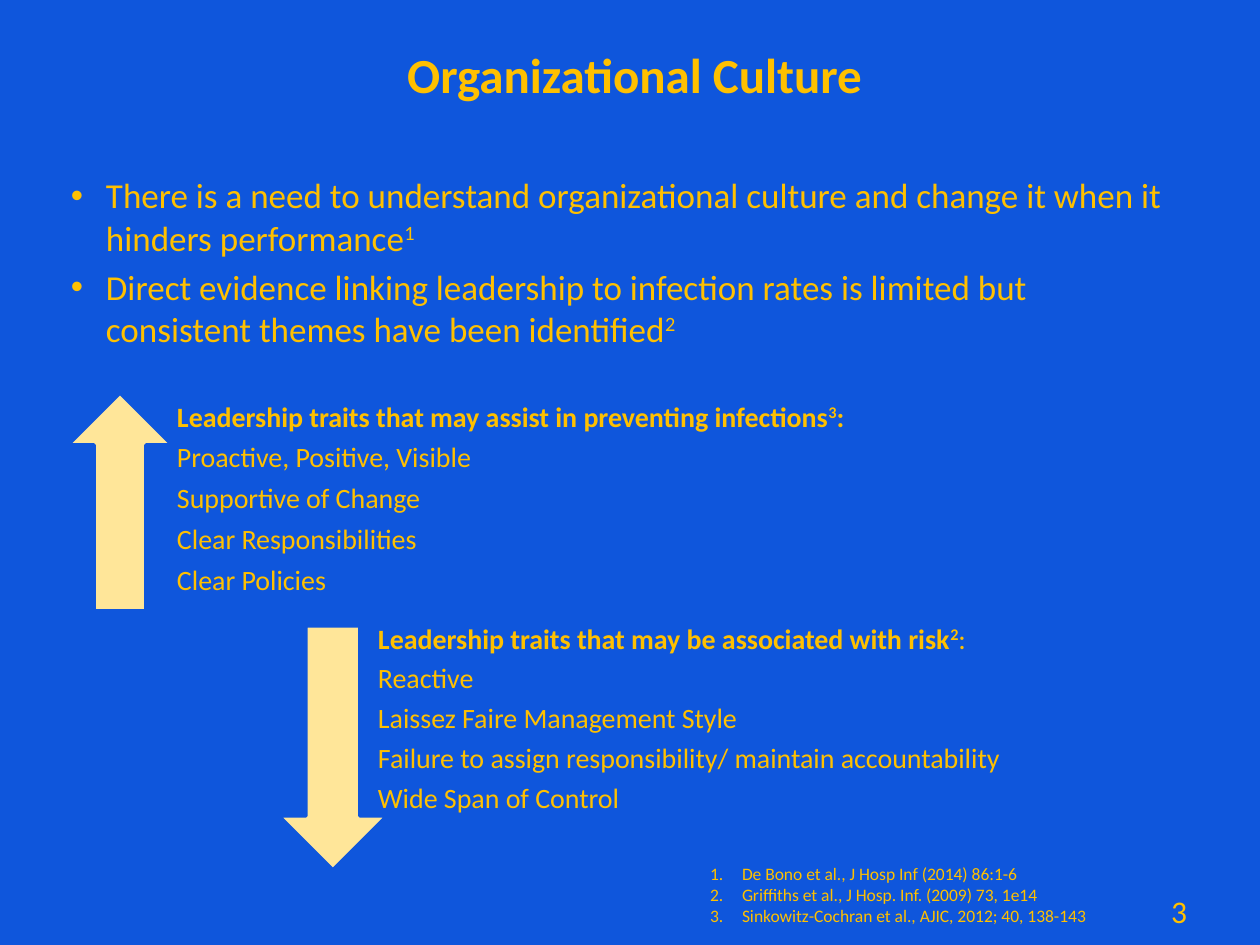
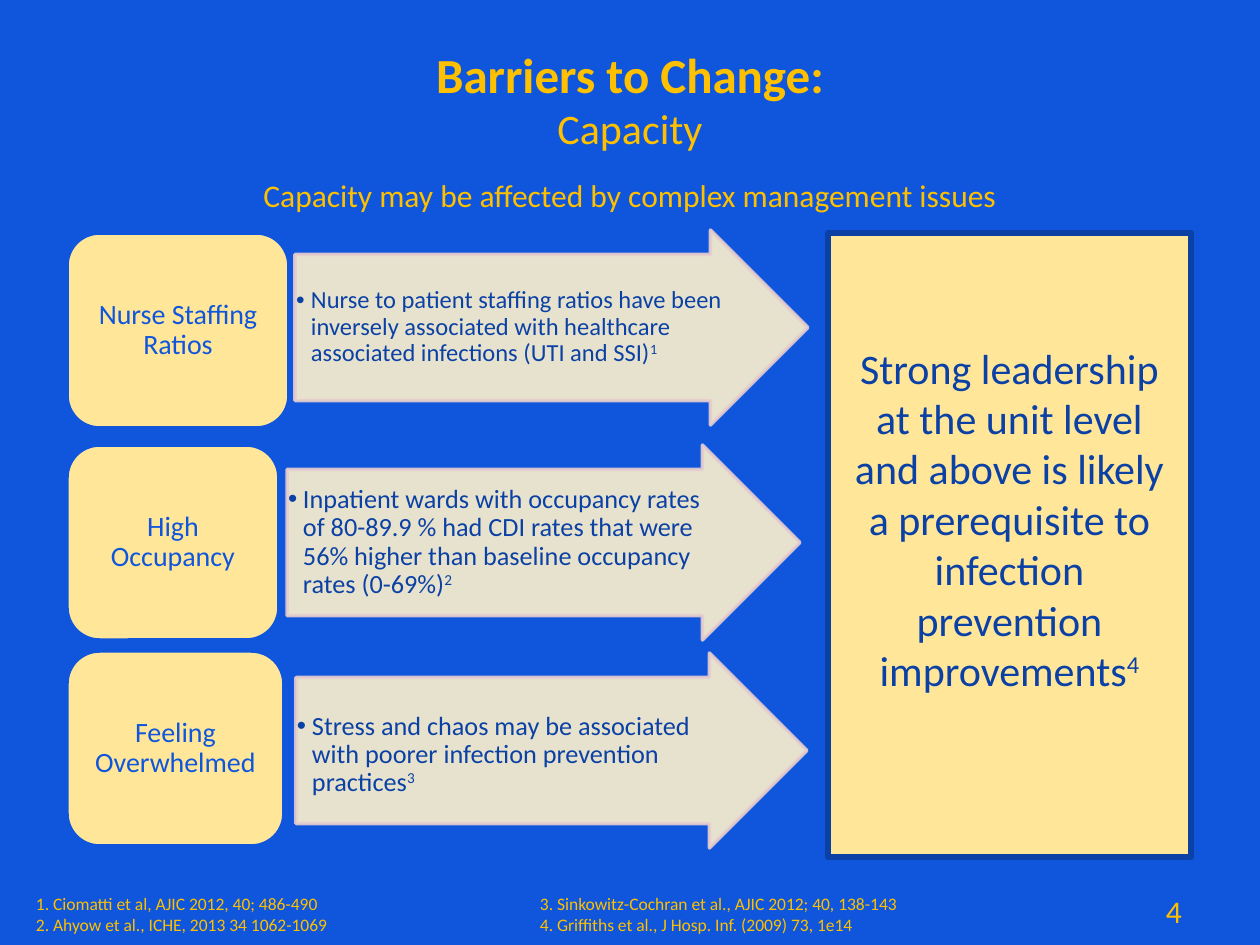
from collections.abc import Sequence
from dataclasses import dataclass
from typing import Optional, Union

from lxml.etree import SubElement
from pptx import Presentation
from pptx.dml.color import RGBColor as Rgb
from pptx.enum.shapes import MSO_SHAPE as Preset
from pptx.enum.text import MSO_ANCHOR as Anchor, PP_ALIGN as Align
from pptx.oxml.ns import qn
from pptx.util import Emu, Pt

EMU_PER_PX = 914400 / 126


@dataclass(frozen=True)
class Theme:
    """Colours and type sizes shared by the slides."""

    font: str = "Calibri"
    blue: str = "0F56DC"
    navy: str = "0B41A5"
    gold: str = "FFC000"
    sand: str = "FFE699"
    cream: str = "FFF2CC"
    rose: str = "E8CECE"
    title: int = 28
    heading: int = 24
    body: int = 20
    note: int = 18
    label: int = 16
    reference: int = 10


THEME = Theme()


@dataclass(frozen=True)
class Area:
    """A rectangle in px."""

    left: int
    top: int
    width: int
    height: int


@dataclass(frozen=True)
class Span:
    """A piece of text with its own weight, size or raised baseline."""

    text: str
    bold: bool = False
    raised: bool = False
    size: Optional[int] = None


@dataclass(frozen=True)
class Bullet:
    """A hanging mark: a character, or automatic numbers when it is empty."""

    indent: int
    character: str = ""


@dataclass(frozen=True)
class Insets:
    """Text margins in px."""

    left: int = 13
    top: int = 6
    right: int = 13
    bottom: int = 6


Line = Union[str, Sequence[Span]]


@dataclass(frozen=True)
class Trait:
    """An arrow with a list of leadership traits beside it."""

    preset: Preset
    arrow: Area
    text: Area
    lines: Sequence[Line]
    after: float


@dataclass(frozen=True)
class Barrier:
    """A labelled box and the arrow that explains it."""

    label: str
    label_box: Area
    arrow: Area
    finding: str
    source: str
    size: int
    top_inset: int = 1


TRAITS = (
    Trait(Preset.UP_ARROW, Area(68, 393, 104, 218), Area(162, 403, 1030, 215), (
        (Span("Leadership traits that may assist in preventing infections", bold=True),
         Span("3", bold=True, raised=True), Span(":", bold=True)),
        "Proactive, Positive, Visible",
        "Supportive of Change",
        "Clear Responsibilities",
        "Clear Policies",
    ), 6),
    Trait(Preset.DOWN_ARROW, Area(279, 626, 108, 244), Area(363, 625, 830, 244), (
        (Span("Leadership traits that may be associated with risk", bold=True),
         Span("2", bold=True, raised=True), Span(":")),
        "Reactive",
        "Laissez Faire Management Style",
        "Failure to assign responsibility/ maintain accountability",
        "Wide Span of Control",
    ), 5.5),
)

BARRIERS = (
    Barrier("Nurse Staffing Ratios", Area(67, 233, 222, 195), Area(295, 230, 513, 195),
            "Nurse to patient staffing ratios have been inversely associated with "
            "healthcare associated infections (UTI and SSI)", "1", 14),
    Barrier("High Occupancy", Area(67, 445, 212, 195), Area(287, 445, 513, 195),
            "Inpatient wards with occupancy rates of 80-89.9 % had CDI rates that were "
            "56% higher than baseline occupancy rates (0-69%)", "2", 15),
    Barrier("Feeling Overwhelmed", Area(67, 651, 217, 195), Area(296, 653, 511, 195),
            "Stress and chaos may be associated with poorer infection prevention practices",
            "3", 15, top_inset=10),
)


def px(length: float) -> Emu:
    """Turn px into EMU."""
    return Emu(round(length * EMU_PER_PX))


def place(area: Area) -> tuple:
    """Return the four EMU lengths of an area."""
    return px(area.left), px(area.top), px(area.width), px(area.height)


def cite(text: str, number: str) -> tuple:
    """Return a line that ends in a raised reference number."""
    return Span(text), Span(number, raised=True)


def add_bullet(para, bullet: Bullet) -> None:
    """Give a paragraph a hanging bullet or number."""
    properties = para._p.get_or_add_pPr()
    properties.set("marL", str(px(bullet.indent)))
    properties.set("indent", str(-px(bullet.indent)))
    if bullet.character:
        SubElement(properties, qn("a:buFont"), typeface="Arial")
        SubElement(properties, qn("a:buChar"), char=bullet.character)
    else:
        SubElement(properties, qn("a:buFont"), typeface="+mj-lt")
        SubElement(properties, qn("a:buAutoNum"), type="arabicPeriod")


def write(shape, lines: Sequence[Line], *, size: int, color: str = THEME.gold,
          align: Align = Align.LEFT, anchor: Anchor = Anchor.TOP,
          insets: Insets = Insets(), bullet: Optional[Bullet] = None,
          spacing: float = 1.0, before: float = 0, after: float = 0) -> None:
    """Fill a shape with formatted paragraphs."""
    frame = shape.text_frame
    frame.word_wrap = True
    frame.vertical_anchor = anchor
    frame.margin_left, frame.margin_top = px(insets.left), px(insets.top)
    frame.margin_right, frame.margin_bottom = px(insets.right), px(insets.bottom)
    for index, line in enumerate(lines):
        para = frame.add_paragraph() if index else frame.paragraphs[0]
        if bullet:
            add_bullet(para, bullet)
        para.alignment = align
        para.line_spacing = spacing
        para.space_before = Pt(before if index else 0)
        para.space_after = Pt(after)
        for span in (Span(line),) if isinstance(line, str) else line:
            run = para.add_run()
            run.text = span.text
            run.font.name = THEME.font
            run.font.size = Pt(span.size or size)
            run.font.bold = span.bold
            run.font.color.rgb = Rgb.from_string(color)
            if span.raised:
                run._r.get_or_add_rPr().set("baseline", "30000")


def add_text(page, area: Area, lines: Sequence[Line], **style) -> None:
    """Add a text box."""
    write(page.shapes.add_textbox(*place(area)), lines, **style)


def add_panel(page, preset: Preset, area: Area, fill: str, line: str,
              weight: int = 2, opacity: int = 100):
    """Add a filled and outlined preset shape."""
    shape = page.shapes.add_shape(preset, *place(area))
    shape.shadow.inherit = False
    shape.fill.solid()
    shape.fill.fore_color.rgb = Rgb.from_string(fill)
    shape.line.color.rgb = Rgb.from_string(line)
    shape.line.width = Pt(weight)
    if opacity < 100:
        for color in shape._element.spPr.iter(qn("a:srgbClr")):
            SubElement(color, qn("a:alpha"), val=str(opacity * 1000))
    return shape


def add_page(deck, title_area: Area, title: Sequence[Line], number: str, number_left: int):
    """Add a blue page with its title and page number."""
    page = deck.slides.add_slide(deck.slide_layouts[6])
    page.background.fill.solid()
    page.background.fill.fore_color.rgb = Rgb.from_string(THEME.blue)
    add_text(page, title_area, title, size=THEME.title, align=Align.CENTER)
    add_text(page, Area(number_left, 886, 72, 59), [number], size=THEME.note)
    return page


def build_culture(deck) -> None:
    """Build the page on organizational culture."""
    page = add_page(deck, Area(33, 38, 1203, 96),
                    [[Span("Organizational Culture", bold=True)]], "3", 1158)
    add_text(page, Area(58, 168, 1134, 200), [
        cite("There is a need to understand organizational culture and change it "
             "when it hinders performance", "1"),
        cite("Direct evidence linking leadership to infection rates is limited but "
             "consistent themes have been identified", "2"),
    ], size=THEME.body, bullet=Bullet(35, "•"), before=4)
    for trait in TRAITS:
        add_panel(page, trait.preset, trait.arrow, THEME.sand, THEME.blue)
        add_text(page, trait.text, trait.lines, size=THEME.label, spacing=0.9,
                 after=trait.after, insets=Insets(15, 0, 15, 15))
    add_text(page, Area(697, 857, 563, 77), [
        "De Bono et al., J Hosp Inf (2014) 86:1-6",
        "Griffiths et al., J Hosp. Inf. (2009) 73, 1e14",
        "Sinkowitz-Cochran et al., AJIC, 2012; 40, 138-143",
    ], size=THEME.reference, bullet=Bullet(32))


def add_barrier(page, barrier: Barrier) -> None:
    """Draw one barrier with its finding."""
    arrow = add_panel(page, Preset.RIGHT_ARROW, barrier.arrow, THEME.cream,
                      THEME.rose, opacity=90)
    arrow.adjustments[0], arrow.adjustments[1] = 0.75, 0.5
    write(arrow, [cite(barrier.finding, barrier.source)], size=barrier.size,
          color=THEME.navy, anchor=Anchor.MIDDLE, bullet=Bullet(15, "•"),
          spacing=0.9, insets=Insets(1, barrier.top_inset, 1, 1))
    label = add_panel(page, Preset.ROUNDED_RECTANGLE, barrier.label_box,
                      THEME.sand, THEME.blue)
    write(label, [barrier.label], size=THEME.label, color=THEME.blue,
          align=Align.CENTER, anchor=Anchor.MIDDLE, spacing=0.9,
          insets=Insets(9, 4, 9, 4))


def build_capacity(deck) -> None:
    """Build the page on capacity as a barrier to change."""
    page = add_page(deck, Area(63, 38, 1134, 158), [
        [Span("Barriers to Change:", bold=True)],
        [Span("Capacity", size=THEME.heading)],
    ], "4", 1153)
    add_text(page, Area(43, 170, 1174, 50),
             ["Capacity may be affected by complex management issues"],
             size=THEME.note, align=Align.CENTER)
    for barrier in BARRIERS:
        add_barrier(page, barrier)
    conclusion = add_panel(page, Preset.RECTANGLE, Area(828, 233, 363, 624),
                           THEME.sand, THEME.navy, weight=3)
    write(conclusion, [cite("Strong leadership at the unit level and above is likely "
                            "a prerequisite to infection prevention improvements", "4")],
          size=THEME.heading, color=THEME.navy, align=Align.CENTER,
          insets=Insets(top=109))
    references = (
        ("1. Ciomatti et al, AJIC 2012, 40; 486-490",
         "2. Ahyow et al., ICHE, 2013 34 1062-1069"),
        ("3. Sinkowitz-Cochran et al., AJIC 2012; 40, 138-143",
         "4. Griffiths et al., J Hosp. Inf. (2009) 73, 1e14"),
    )
    for column, lines in enumerate(references):
        add_text(page, Area(23 + 504 * column, 887, 504, 56), lines, size=THEME.reference)


def main() -> None:
    """Build and save the deck."""
    deck = Presentation()
    deck.slide_width, deck.slide_height = px(1260), px(945)
    build_culture(deck)
    build_capacity(deck)
    deck.save("out.pptx")


if __name__ == "__main__":
    main()
